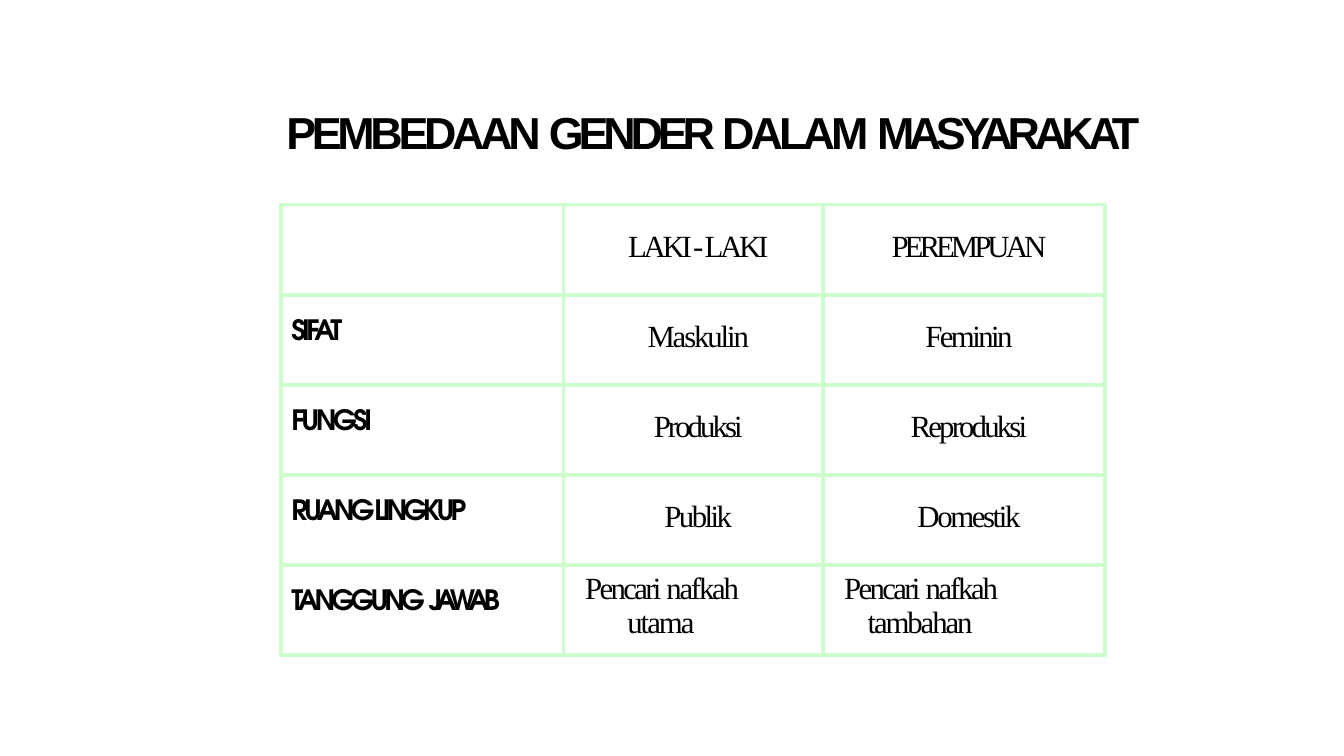
import pptx
import pptx.dml.color
import pptx.enum.text
import pptx.oxml
import pptx.oxml.ns
import pptx.util
from pptx.util import Inches

BLACK = pptx.dml.color.RGBColor(0x00, 0x00, 0x00)
MINT = pptx.dml.color.RGBColor(0xCC, 0xFF, 0xCC)
LEFT = pptx.enum.text.PP_ALIGN.LEFT
CENTER = pptx.enum.text.PP_ALIGN.CENTER

TITLE = [("PEMBEDAAN ", -3.1), ("GENDER ", -3.7), ("DALAM ", -2.8), ("MASYARAKAT", -3.9)]
COLUMN_WIDTHS = [2.8, 2.57, 2.8]
BREADWINNER = [("Pencari ", -1.9), ("nafkah ", -1.6)]
WRAPPED_WIDTH = 1.73
ROWS = [
    [[], [("LAKI - LAKI", -2.3)], [("PEREMPUAN", -2.8)]],
    [[("SIFAT", -2.7)], [("Maskulin", -1.5)], [("Feminin", -1.8)]],
    [[("FUNGSI", -2.5)], [("Produksi", -2.1)], [("Reproduksi", -2)]],
    [[("RUANG LINGKUP", -2.8)], [("Publik", -1.8)], [("Domestik", -1.7)]],
    [
        [("TANGGUNG ", -2.9), ("JAWAB", -3.8)],
        BREADWINNER + [("utama", -1.4)],
        BREADWINNER + [("tambahan", -1.5)],
    ],
]


class GenderSlide:
    title_style = ("Arial", 32, True, CENTER)
    label_style = ("TeX Gyre Adventor", 20, True, LEFT)
    value_style = ("Times New Roman", 22, False, CENTER)
    cell_indent = 0.1
    border_width = 3

    def __init__(self, deck):
        self.page = deck.slides.add_slide(deck.slide_layouts[6])

    def fill_text(self, frame, spans, style):
        name, size, bold, alignment = style
        para = frame.paragraphs[0]
        para.alignment = alignment
        para.font.name = name
        para.font.size = pptx.util.Pt(size)
        para.font.bold = bold
        para.font.color.rgb = BLACK
        for text, spacing in spans:
            span = para.add_run()
            span.text = text
            span.font._element.set("spc", str(round(spacing * 100)))

    def add_title(self, spans, left, top, width, height):
        box = self.page.shapes.add_textbox(
            Inches(left), Inches(top), Inches(width), Inches(height)
        )
        frame = box.text_frame
        frame.word_wrap = False
        frame.vertical_anchor = pptx.enum.text.MSO_ANCHOR.MIDDLE
        frame.margin_left = frame.margin_right = frame.margin_bottom = 0
        frame.margin_top = Inches(0.01)
        self.fill_text(frame, spans, self.title_style)

    def add_borders(self, cell):
        properties = cell._tc.get_or_add_tcPr()
        for side in ("lnL", "lnR", "lnT", "lnB"):
            properties.append(pptx.oxml.parse_xml(
                f'<a:{side} {pptx.oxml.ns.nsdecls("a")} w="{pptx.util.Pt(self.border_width)}">'
                f'<a:solidFill><a:srgbClr val="{MINT}"/></a:solidFill></a:{side}>'
            ))

    def add_table(self, rows, widths, left, top, height):
        table = self.page.shapes.add_table(
            len(rows), len(widths), Inches(left), Inches(top),
            Inches(sum(widths)), Inches(height)
        ).table
        table.first_row = table.horz_banding = False
        for column, width in zip(table.columns, widths):
            column.width = Inches(width)
        for row_index, row in enumerate(rows):
            for column_index, spans in enumerate(row):
                cell = table.cell(row_index, column_index)
                wraps = spans[:2] == BREADWINNER
                spare = widths[column_index] - self.cell_indent - WRAPPED_WIDTH
                cell.margin_left = Inches(self.cell_indent)
                cell.margin_top = Inches(0.07 if wraps else 0.25)
                cell.margin_right = Inches(spare if wraps else 0)
                cell.margin_bottom = 0
                self.add_borders(cell)
                cell.fill.background()
                style = self.value_style if column_index else self.label_style
                self.fill_text(cell.text_frame, spans, style)


def main():
    deck = pptx.Presentation()
    deck.slide_width = Inches(13.33)
    deck.slide_height = Inches(7.5)
    slide = GenderSlide(deck)
    slide.add_title(TITLE, 2.79, 1.03, 8.56, 0.55)
    slide.add_table(ROWS, COLUMN_WIDTHS, 2.79, 2.03, 4.47)
    deck.save("out.pptx")


if __name__ == "__main__":
    main()
